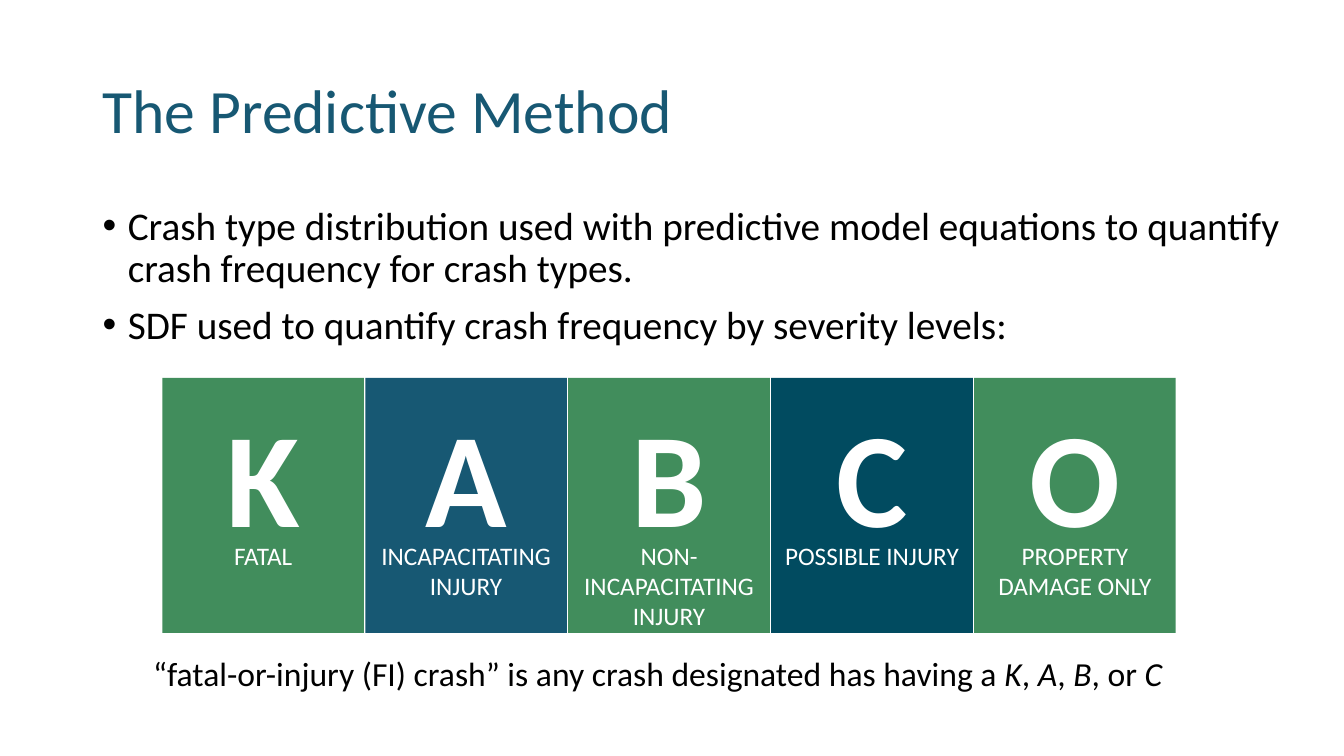
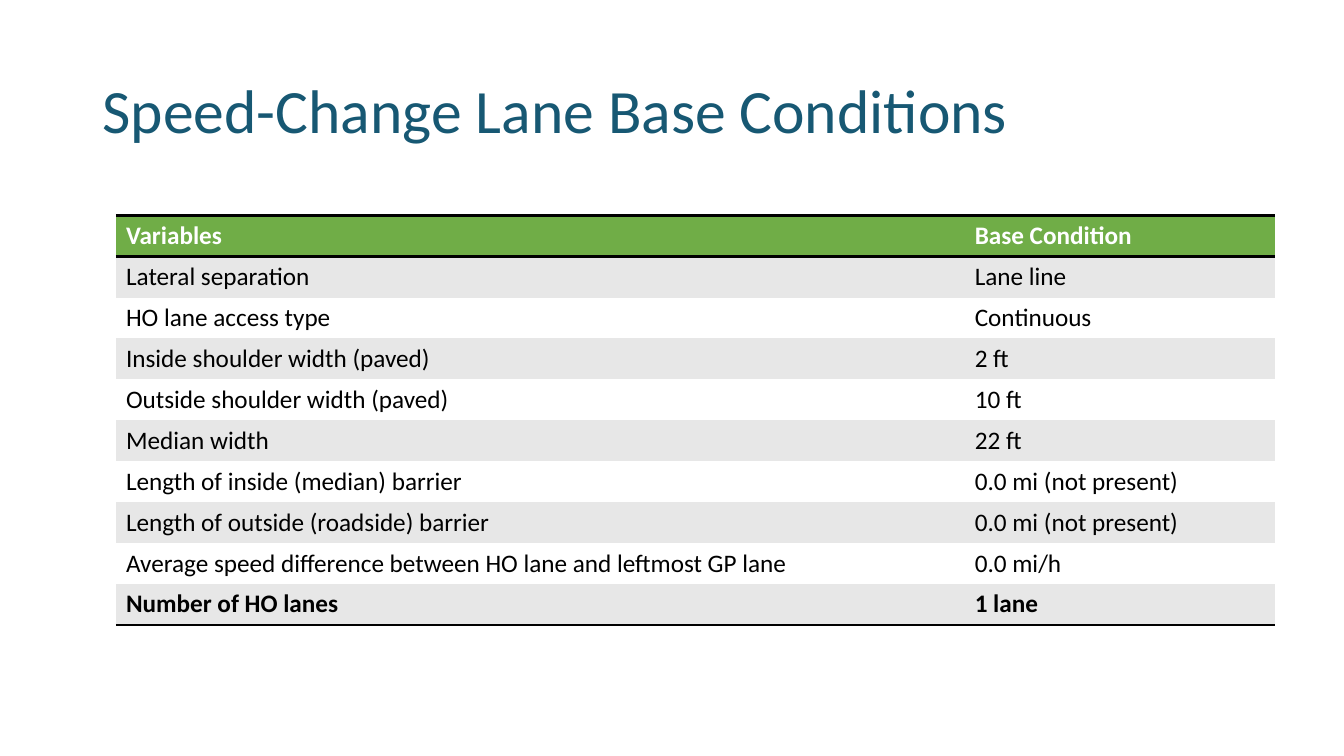
from dataclasses import dataclass

from lxml.etree import SubElement
from pptx import Presentation
from pptx.dml.color import RGBColor as Color
from pptx.enum.shapes import MSO_SHAPE as Preset
from pptx.enum.text import MSO_ANCHOR as Anchor, PP_ALIGN as Align
from pptx.oxml.ns import qn
from pptx.util import Inches, Pt


@dataclass(frozen=True)
class Theme:
    font: str = "Calibri"
    blue: Color = Color.from_string("175873")
    green: Color = Color.from_string("418D5C")
    navy: Color = Color.from_string("014B60")
    header: Color = Color.from_string("70AD47")
    band: Color = Color.from_string("E7E7E7")
    white: Color = Color.from_string("FFFFFF")
    black: Color = Color.from_string("000000")
    title_size: int = 44
    body_size: int = 28
    note_size: int = 24
    small_size: int = 18
    letter_size: int = 96


theme = Theme()
presentation = Presentation()
presentation.slide_width = Inches(13.33)
presentation.slide_height = Inches(7.5)


def place(left, top, width, height):
    column = presentation.slide_width / 100
    row = presentation.slide_height / 100
    return int(left * column), int(top * row), int(width * column), int(height * row)


def style(paragraph, size, color, bold=False, align=Align.LEFT, spacing=1.0):
    paragraph.alignment = align
    paragraph.line_spacing = spacing
    font = paragraph.font
    font.name, font.size, font.bold = theme.font, Pt(size), bold
    font.color.rgb = color


slides = []
for title in ["The Predictive Method", "Speed-Change Lane Base Conditions"]:
    slide = presentation.slides.add_slide(presentation.slide_layouts[6])
    title_frame = slide.shapes.add_textbox(*place(6.9, 5.33, 86.25, 19.33)).text_frame
    title_frame.word_wrap = True
    title_frame.vertical_anchor = Anchor.MIDDLE
    title_frame.text = title
    style(title_frame.paragraphs[0], theme.title_size, theme.blue, spacing=0.9)
    slides.append(slide)
method_slide, conditions_slide = slides

body_frame = method_slide.shapes.add_textbox(*place(6.9, 26.67, 89.78, 21)).text_frame
body_frame.word_wrap = True
body_frame.text = "\n".join([
    "Crash type distribution used with predictive model equations to quantify crash frequency for crash types.",
    "SDF used to quantify crash frequency by severity levels:",
])
for index, paragraph in enumerate(body_frame.paragraphs):
    properties = paragraph._p.get_or_add_pPr()
    properties.set("marL", str(Inches(0.25)))
    properties.set("indent", str(Inches(-0.25)))
    SubElement(properties, qn("a:buFont"), typeface="Arial")
    SubElement(properties, qn("a:buChar"), char="•")
    style(paragraph, theme.body_size, theme.black, spacing=0.9)
    paragraph.space_before = Pt(10 if index else 0)

severity_levels = [
    ("K", "FATAL", theme.green),
    ("A", "INCAPACITATING INJURY", theme.blue),
    ("B", "NON-INCAPACITATING INJURY", theme.green),
    ("C", "POSSIBLE INJURY", theme.navy),
    ("O", "PROPERTY DAMAGE ONLY", theme.green),
]
tile_left, tile_width, tile_pitch = 12.08, 15, 15.1
for index, (letter, meaning, color) in enumerate(severity_levels):
    left = tile_left + index * tile_pitch
    tile = method_slide.shapes.add_shape(Preset.RECTANGLE, *place(left, 50, tile_width, 33.73))
    tile.shadow.inherit = False
    tile.fill.solid()
    tile.fill.fore_color.rgb = color
    tile.line.fill.background()
    for text, top, height, size, bold in [
        (letter, 51.33, 22.93, theme.letter_size, True),
        (meaning, 70.8, 13.47, theme.small_size, False),
    ]:
        text_frame = method_slide.shapes.add_textbox(*place(left, top, tile_width, height)).text_frame
        text_frame.word_wrap = True
        text_frame.text = text
        style(text_frame.paragraphs[0], size, theme.white, bold, Align.CENTER)

note_frame = method_slide.shapes.add_textbox(*place(10.65, 85.33, 86, 8)).text_frame
note_frame.word_wrap = True
note_frame.vertical_anchor = Anchor.MIDDLE
note = note_frame.paragraphs[0]
style(note, theme.note_size, theme.black, spacing=0.9)
for text, italic in [
    ("“fatal-or-injury (FI) crash” is any crash designated has having a ", False),
    ("K", True), (", ", False), ("A", True), (", ", False),
    ("B", True), (", or ", False), ("C", True),
]:
    run = note.add_run()
    run.text = text
    run.font.italic = italic

conditions = [
    ("Variables", "Base Condition"),
    ("Lateral separation", "Lane line"),
    ("HO lane access type", "Continuous"),
    ("Inside shoulder width (paved)", "2 ft"),
    ("Outside shoulder width (paved)", "10 ft"),
    ("Median width", "22 ft"),
    ("Length of inside (median) barrier", "0.0 mi (not present)"),
    ("Length of outside (roadside) barrier", "0.0 mi (not present)"),
    ("Average speed difference between HO lane and leftmost GP lane", "0.0 mi/h"),
    ("Number of HO lanes", "1 lane"),
]
last_row = len(conditions) - 1
table = conditions_slide.shapes.add_table(
    len(conditions), 2, *place(8.63, 28.53, 86.25, 54.13)
).table
table.horz_banding = False
table._tbl.tblPr.find(qn("a:tableStyleId")).text = "{2D5ABB26-0587-4C30-8999-92F81FD0307C}"
for column, share in zip(table.columns, [63.15, 23.1]):
    column.width = int(presentation.slide_width * share / 100)

for row_index, values in enumerate(conditions):
    is_header = row_index == 0
    is_edge = row_index in (0, last_row)
    borders = ["a:lnT"] * is_header + ["a:lnB"] * is_edge
    band = theme.band if row_index % 2 else theme.white
    for column_index, value in enumerate(values):
        cell = table.cell(row_index, column_index)
        cell.text = value
        style(
            cell.text_frame.paragraphs[0], theme.small_size,
            theme.white if is_header else theme.black, is_edge,
        )
        for border in borders:
            line = SubElement(cell._tc.get_or_add_tcPr(), qn(border), w=str(Pt(2)))
            line_fill = SubElement(line, qn("a:solidFill"))
            SubElement(line_fill, qn("a:srgbClr"), val=str(theme.black))
        cell.fill.solid()
        cell.fill.fore_color.rgb = theme.header if is_header else band

presentation.save("out.pptx")
